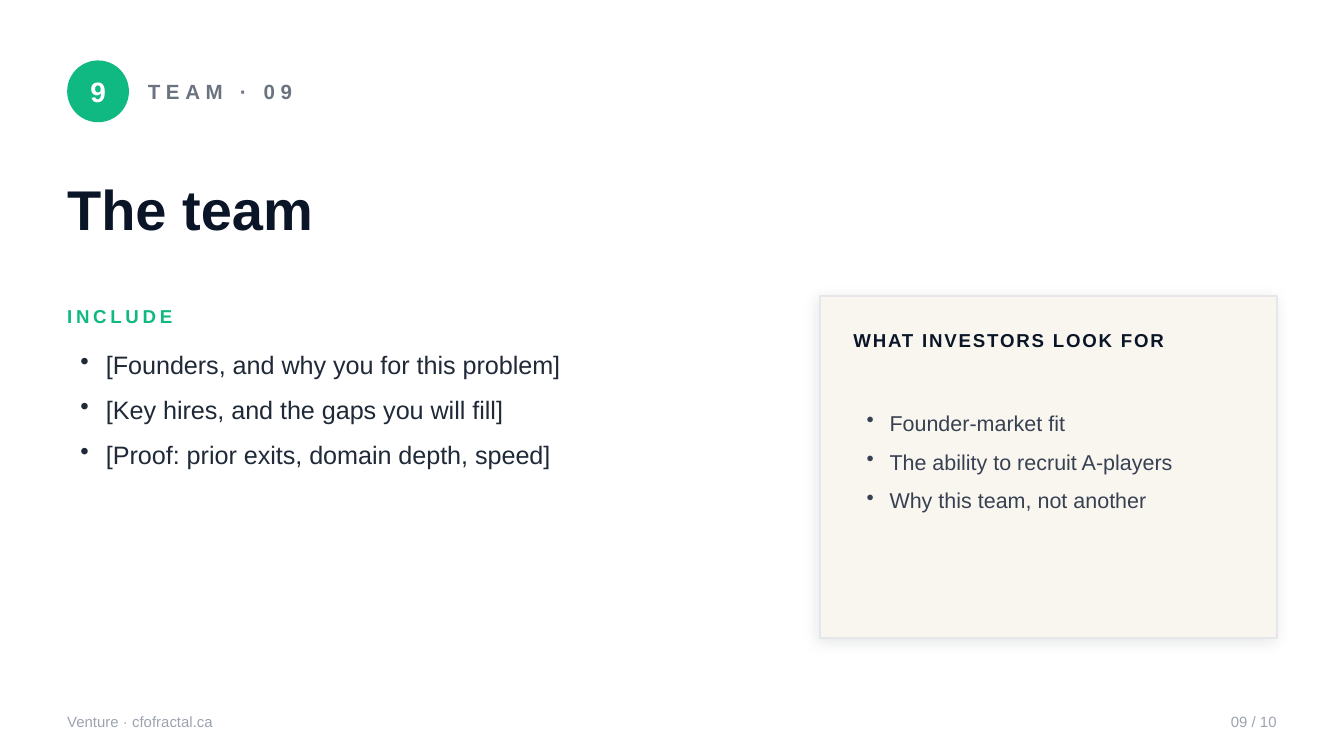
from lxml.etree import SubElement
from pptx import Presentation
from pptx.dml.color import RGBColor
from pptx.enum.shapes import MSO_SHAPE
from pptx.enum.text import MSO_ANCHOR, MSO_AUTO_SIZE, PP_ALIGN
from pptx.oxml import parse_xml
from pptx.oxml.ns import nsdecls, qn
from pptx.util import Inches, Pt

COLORS = {"green": "10B981", "white": "FFFFFF", "navy": "0A1628", "ink": "1F2937",
          "slate": "374151", "gray": "6B7280", "pale": "9CA3AF",
          "cream": "F9F6F0", "edge": "E5E7EB"}


def color(name):
    return RGBColor.from_string(COLORS[name])


def write(shape, lines, size, tone, bold=False, track=0, align=PP_ALIGN.LEFT,
          anchor=MSO_ANCHOR.MIDDLE, inset=(0, 0), indent=0, after=0):
    """Fill a shape with one paragraph per line; an indent makes them bullets."""
    frame = shape.text_frame
    side, edge = map(Inches, inset)
    box = {"word_wrap": True, "auto_size": MSO_AUTO_SIZE.NONE, "vertical_anchor": anchor,
           "margin_left": side, "margin_right": side,
           "margin_top": edge, "margin_bottom": edge}
    for key, value in box.items():
        setattr(frame, key, value)
    for i, line in enumerate(lines):
        para = frame.paragraphs[0] if i == 0 else frame.add_paragraph()
        para.alignment = align
        if indent:
            props = para._p.get_or_add_pPr()
            props.set("marL", str(Inches(indent)))
            props.set("indent", str(-Inches(indent)))
            SubElement(props, qn("a:buSzPct"), val="100000")
            SubElement(props, qn("a:buChar"), char="•")
            para.space_after = Pt(after)
        run = para.add_run()
        run.text = line
        for font in (para.font, run.font):
            for key, value in {"name": "Arial", "size": Pt(size), "bold": bold}.items():
                setattr(font, key, value)
            font.color.rgb = color(tone)
        if track:
            run._r.get_or_add_rPr().set("spc", str(track * 100))


deck = Presentation()
deck.slide_width = Inches(10)
deck.slide_height = deck.slide_width * 9 // 16
slide = deck.slides.add_slide(deck.slide_layouts[5])
shapes = slide.shapes

# Title
title = shapes.title
place = {"left": 0.5, "top": 1.15, "width": 9, "height": 0.8}
for key, value in place.items():
    setattr(title, key, Inches(value))
write(title, ["The team"], 30, "navy", bold=True)

# Number badge
badge = shapes.add_shape(MSO_SHAPE.OVAL, *map(Inches, (0.5, 0.45, 0.46, 0.46)))
badge.shadow.inherit = False
badge.fill.solid()
badge.fill.fore_color.rgb = color("green")
badge.line.fill.background()
write(badge, ["9"], 15, "white", bold=True, align=PP_ALIGN.CENTER)

# Investor card with a soft shadow
card = shapes.add_shape(MSO_SHAPE.RECTANGLE, *map(Inches, (6.1, 2.2, 3.4, 2.55)))
card.shadow.inherit = False
card.fill.solid()
card.fill.fore_color.rgb = color("cream")
card.line.color.rgb = color("edge")
card.line.width = Pt(1)
effects = card._element.spPr.find(qn("a:effectLst"))
effects.append(parse_xml(
    f'<a:outerShdw {nsdecls("a")} blurRad="{Pt(8)}" dist="{Pt(2)}" dir="{135 * 60000}" '
    f'algn="bl" rotWithShape="0"><a:srgbClr val="{COLORS["navy"]}">'
    '<a:alpha val="10000"/></a:srgbClr></a:outerShdw>'))

# Labels, lists and footer
top = {"anchor": MSO_ANCHOR.TOP}
points = {**top, "inset": (0.1, 0.05)}
texts = [
    ((1.1, 0.45, 6, 0.46), ["TEAM · 09"], 11, "gray", {"bold": True, "track": 3}),
    ((0.5, 2.2, 5.2, 0.3), ["INCLUDE"], 10, "green", {"bold": True, "track": 2}),
    ((0.5, 2.55, 5.2, 2.4),
     ["[Founders, and why you for this problem]",
      "[Key hires, and the gaps you will fill]",
      "[Proof: prior exits, domain depth, speed]"],
     13.5, "ink", {**points, "indent": 0.19, "after": 8}),
    ((6.35, 2.45, 2.95, 0.5), ["WHAT INVESTORS LOOK FOR"], 10, "navy",
     {**top, "bold": True, "track": 1}),
    ((6.35, 3, 2.95, 1.65),
     ["Founder-market fit",
      "The ability to recruit A-players",
      "Why this team, not another"],
     11.5, "slate", {**points, "indent": 0.17, "after": 7}),
    ((0.5, 5.22, 5, 0.3), ["Venture · cfofractal.ca"], 8, "pale", {}),
    ((8.5, 5.22, 1, 0.3), ["09 / 10"], 8, "pale", {"align": PP_ALIGN.RIGHT}),
]
for spot, lines, size, tone, style in texts:
    write(shapes.add_textbox(*map(Inches, spot)), lines, size, tone, **style)

deck.save("out.pptx")
